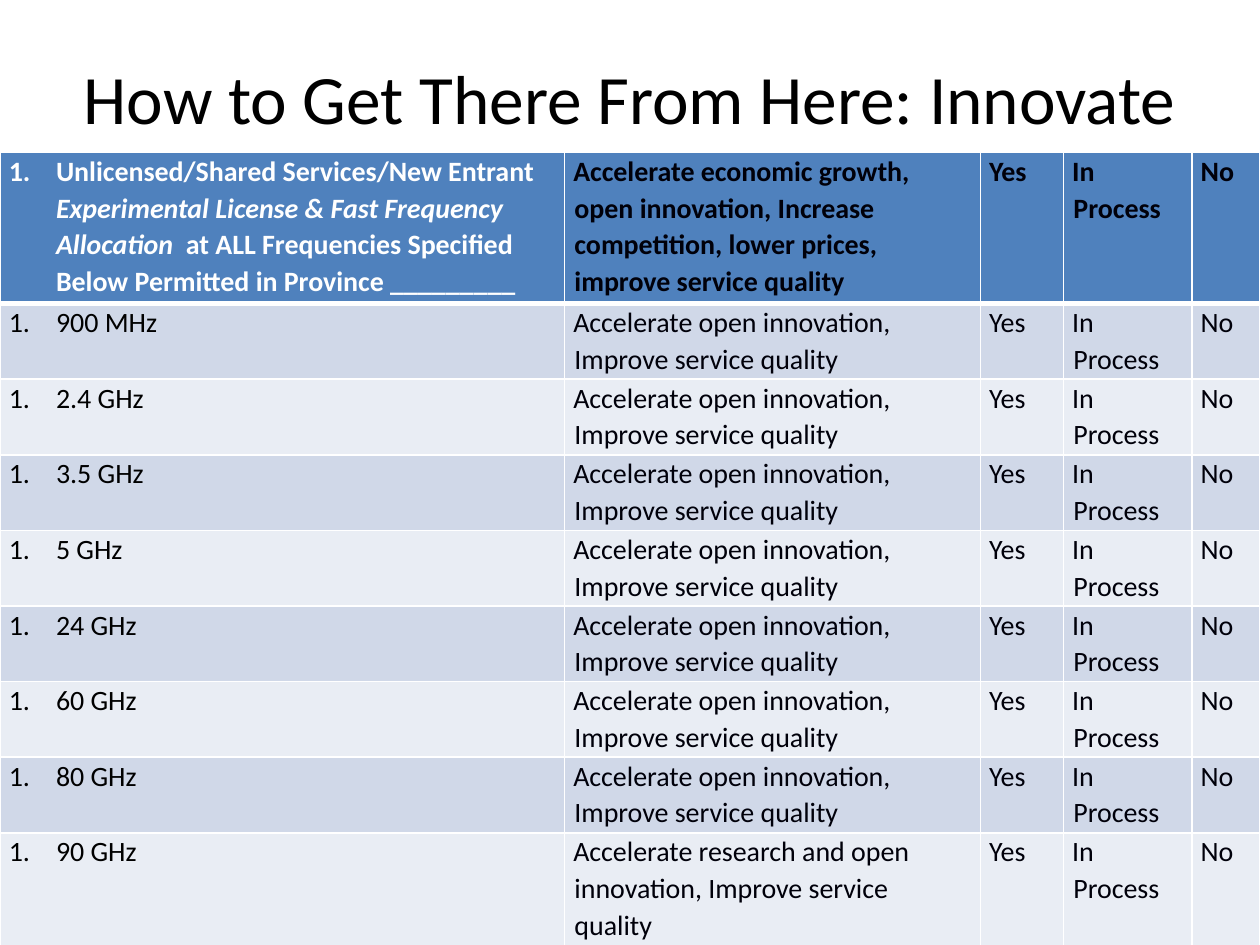
from lxml import etree
from pptx import Presentation
from pptx.dml.color import RGBColor
from pptx.enum.text import MSO_ANCHOR, PP_ALIGN
from pptx.oxml.ns import qn
from pptx.util import Pt

CENTER = PP_ALIGN.CENTER
MIDDLE = MSO_ANCHOR.MIDDLE

FONT = "Calibri"
BLACK, INK, WHITE = "000000", "00000A", "FFFFFF"
HEADER_FILL = "4F81BD"
BAND_FILLS = ("D0D8E8", "E9EDF4")

COLUMN_WIDTHS = (322.56, 237.6, 47.52, 73.44, 38.88)
LINE_HEIGHT = 21.6
STATUSES = ("Yes", "In Process", "No")
HEADER_TOPIC = (
    ("Unlicensed/Shared Services/New Entrant ", False),
    ("Experimental License & Fast Frequency Allocation", True),
    ("  at ALL Frequencies Specified Below Permitted in Province _________", False),
)
HEADER_BENEFIT = ("Accelerate economic growth,  open innovation, Increase competition, "
                  "lower prices, improve service quality")
BENEFIT = "Accelerate open innovation, Improve service quality"
LAST_BENEFIT = "Accelerate research and open innovation, Improve service quality"
FREQUENCIES = ("900 MHz", "2.4 GHz", "3.5 GHz", "5 GHz", "24 GHz", "60 GHz", "80 GHz")


def rgb(color):
    return RGBColor.from_string(color)


def set_attributes(target, values):
    for name, value in values.items():
        setattr(target, name, value)


def add_run(paragraph, text, size, color, bold=False, italic=False):
    run = paragraph.add_run()
    run.text = text
    set_attributes(run.font, {"name": FONT, "size": Pt(size), "bold": bold, "italic": italic})
    run.font.color.rgb = rgb(color)


def set_indent(paragraph, indent, numbered):
    """Hang the first line by the indent, with a number when asked."""
    properties = paragraph._p.get_or_add_pPr()
    properties.set("marL", str(Pt(indent)))
    properties.set("indent", str(-Pt(indent)))
    if numbered:
        etree.SubElement(properties, qn("a:buFont"), typeface=FONT)
        etree.SubElement(properties, qn("a:buAutoNum"), type="arabicPeriod")


def set_borders(cell, top, bottom):
    properties = cell._tc.get_or_add_tcPr()
    for side, width in (("L", 1), ("R", 1), ("T", top), ("B", bottom)):
        line = etree.SubElement(properties, qn(f"a:ln{side}"), w=str(Pt(width)))
        fill = etree.SubElement(line, qn("a:solidFill"))
        etree.SubElement(fill, qn("a:srgbClr"), val=WHITE)


def fill_cell(cell, runs, fill, color, bold, numbered, top, bottom):
    set_borders(cell, top, bottom)
    cell.fill.solid()
    cell.fill.fore_color.rgb = rgb(fill)
    set_attributes(cell, {"margin_left": Pt(5.04), "margin_right": Pt(5.04),
                          "margin_top": 0, "margin_bottom": 0})
    paragraph = cell.text_frame.paragraphs[0]
    set_indent(paragraph, 27 if numbered else 0.72, numbered)
    paragraph.line_spacing = 1.07
    for text, italic in runs:
        add_run(paragraph, text, 16, color, bold, italic)


def add_title(slide, left, top, width, height):
    shape = slide.shapes.add_textbox(Pt(left), Pt(top), Pt(width), Pt(height))
    set_attributes(shape.text_frame, {"word_wrap": True, "vertical_anchor": MIDDLE})
    paragraph = shape.text_frame.paragraphs[0]
    paragraph.alignment = CENTER
    add_run(paragraph, "How to Get There From Here: Innovate", 39.6, BLACK)


def add_frequency_table(slide, left, top, width, height):
    records = [(HEADER_TOPIC, HEADER_BENEFIT, 4)]
    records += [(((frequency, False),), BENEFIT, 2) for frequency in FREQUENCIES]
    records.append(((("90 GHz", False),), LAST_BENEFIT, 3))
    frame = slide.shapes.add_table(len(records), len(COLUMN_WIDTHS),
                                   Pt(left), Pt(top), Pt(width), Pt(height))
    table = frame.table
    set_attributes(table, {"first_row": False, "horz_banding": False})
    for column, column_width in zip(table.columns, COLUMN_WIDTHS):
        column.width = Pt(column_width)
    for row_index, (topic, benefit, line_count) in enumerate(records):
        row = table.rows[row_index]
        row.height = Pt(line_count * LINE_HEIGHT)
        header = row_index == 0
        fill = HEADER_FILL if header else BAND_FILLS[(row_index - 1) % 2]
        topic_color = WHITE if header else BLACK
        cell_runs = [topic] + [((text, False),) for text in (benefit, *STATUSES)]
        for column_index, runs in enumerate(cell_runs):
            numbered = column_index == 0
            fill_cell(row.cells[column_index], runs, fill,
                      color=topic_color if numbered else INK,
                      bold=header, numbered=numbered,
                      top=3 if row_index == 1 else 1, bottom=3 if header else 1)


def main():
    presentation = Presentation()
    set_attributes(presentation, {"slide_width": Pt(720), "slide_height": Pt(540)})
    slide = presentation.slides.add_slide(presentation.slide_layouts[6])
    add_title(slide, 36, 10, 648, 90)
    add_frequency_table(slide, 0, 87.12, 720, 453.6)
    presentation.save("out.pptx")


if __name__ == "__main__":
    main()
